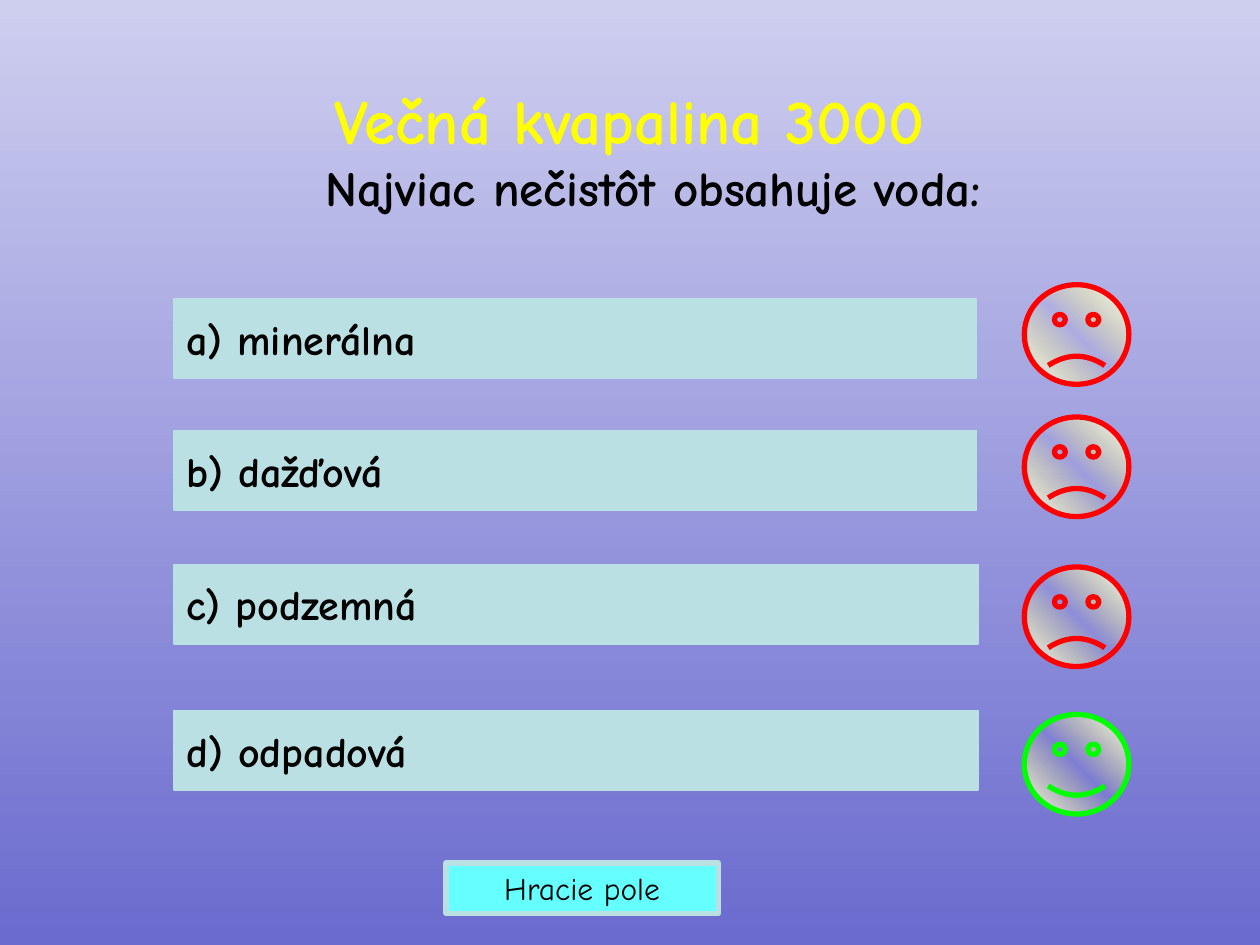
from copy import deepcopy
from dataclasses import dataclass

from lxml import etree
from pptx import Presentation
from pptx.dml.color import RGBColor
from pptx.enum.shapes import MSO_SHAPE
from pptx.enum.text import MSO_ANCHOR, PP_ALIGN
from pptx.oxml.ns import qn
from pptx.util import Inches, Pt

BUTTON = MSO_SHAPE.ACTION_BUTTON_CUSTOM
SMILEY = MSO_SHAPE.SMILEY_FACE
MIDDLE = MSO_ANCHOR.MIDDLE
LEFT, CENTER = PP_ALIGN.LEFT, PP_ALIGN.CENTER

FONT = "Comic Neue"
WIDTH, HEIGHT = 10, 7.5
BLACK, PALE, CYAN = "000000", "BBE0E3", "66FFFF"
RED, GREEN, YELLOW = "FF0000", "00FF00", "FFFF00"
ANSWER_X, FACE_X = 1.38, 8.13
HANGING = 0.38


@dataclass
class Answer:
    text: str
    top: float
    width: float
    face_top: float
    correct: bool = False


ANSWERS = [
    Answer("a) minerálna", 2.37, 6.37, 2.26),
    Answer("b) dažďová", 3.42, 6.37, 3.31),
    Answer("c) podzemná", 4.48, 6.38, 4.5),
    Answer("d) odpadová", 5.64, 6.38, 5.67, True),
]


def rgb(value: str) -> RGBColor:
    return RGBColor.from_string(value)


def add_run(p, text: str, size: float, color: str, bold: bool) -> None:
    r = p.add_run()
    r.text = text
    r.font.name = FONT
    r.font.size = Pt(size)
    r.font.bold = bold
    r.font.color.rgb = rgb(color)


def set_gradient(fill, colors: tuple[str, str], angle: float) -> None:
    fill.gradient()
    fill.gradient_angle = angle
    for stop, color, position in zip(fill.gradient_stops, colors, (0, 1)):
        stop.color.rgb = rgb(color)
        stop.position = position


def add_shape(s, kind, box: tuple, line: str, weight: float):
    sp = s.shapes.add_shape(kind, *map(Inches, box))
    sp.shadow.inherit = False
    sp.line.color.rgb = rgb(line)
    sp.line.width = Pt(weight)
    return sp


def add_button(s, box: tuple, text: str, size: float, fill: str,
               weight: float, align, bold: bool) -> None:
    sp = add_shape(s, BUTTON, box, PALE, weight)
    sp.fill.solid()
    sp.fill.fore_color.rgb = rgb(fill)
    tf = sp.text_frame
    tf.word_wrap = False
    tf.vertical_anchor = MIDDLE
    p = tf.paragraphs[0]
    p.alignment = align
    add_run(p, text, size, BLACK, bold)


def add_face(s, top: float, correct: bool) -> None:
    sp = add_shape(s, SMILEY, (FACE_X, top, 0.83, 0.79),
                   GREEN if correct else RED, 3)
    sp.adjustments[0] = 0.047 if correct else -0.047
    set_gradient(sp.fill, ("FFFFFF", "FFFFFF"), 45)
    stops = sp._element.spPr.find(qn("a:gradFill")).find(qn("a:gsLst"))
    middle = deepcopy(stops[0])
    middle.set("pos", "50000")
    middle[0].set("val", "FFFF66")
    etree.SubElement(middle[0], qn("a:alpha"), val="0")
    stops.insert(1, middle)


def add_heading(s) -> None:
    box = s.shapes.add_textbox(*map(Inches, (0.39, 0.6, 9.21, 0.75)))
    tf = box.text_frame
    tf.word_wrap = True
    title, question = tf.paragraphs[0], tf.add_paragraph()
    for p in (title, question):
        p.alignment = CENTER
        p._p.get_or_add_pPr().set("marL", str(Inches(HANGING)))
    pPr = title._p.get_or_add_pPr()
    pPr.set("indent", str(-Inches(HANGING)))
    before = etree.SubElement(pPr, qn("a:spcBef"))
    etree.SubElement(before, qn("a:spcPct"), val="20000")
    add_run(title, "Večná kvapalina 3000", 36, YELLOW, True)
    add_run(question, "Najviac nečistôt obsahuje voda:", 28, BLACK, True)


def main() -> None:
    prs = Presentation()
    prs.slide_width, prs.slide_height = Inches(WIDTH), Inches(HEIGHT)
    s = prs.slides.add_slide(prs.slide_layouts[6])
    set_gradient(s.background.fill, ("CECEEF", "6B6BCF"), 270)
    add_heading(s)
    for a in ANSWERS:
        add_button(s, (ANSWER_X, a.top, a.width, 0.63), a.text, 24, PALE,
                   1, LEFT, True)
        add_face(s, a.face_top, a.correct)
    add_button(s, (3.54, 6.85, 2.16, 0.4), "Hracie pole", 18, CYAN,
               3, CENTER, False)
    prs.save("out.pptx")


if __name__ == "__main__":
    main()
